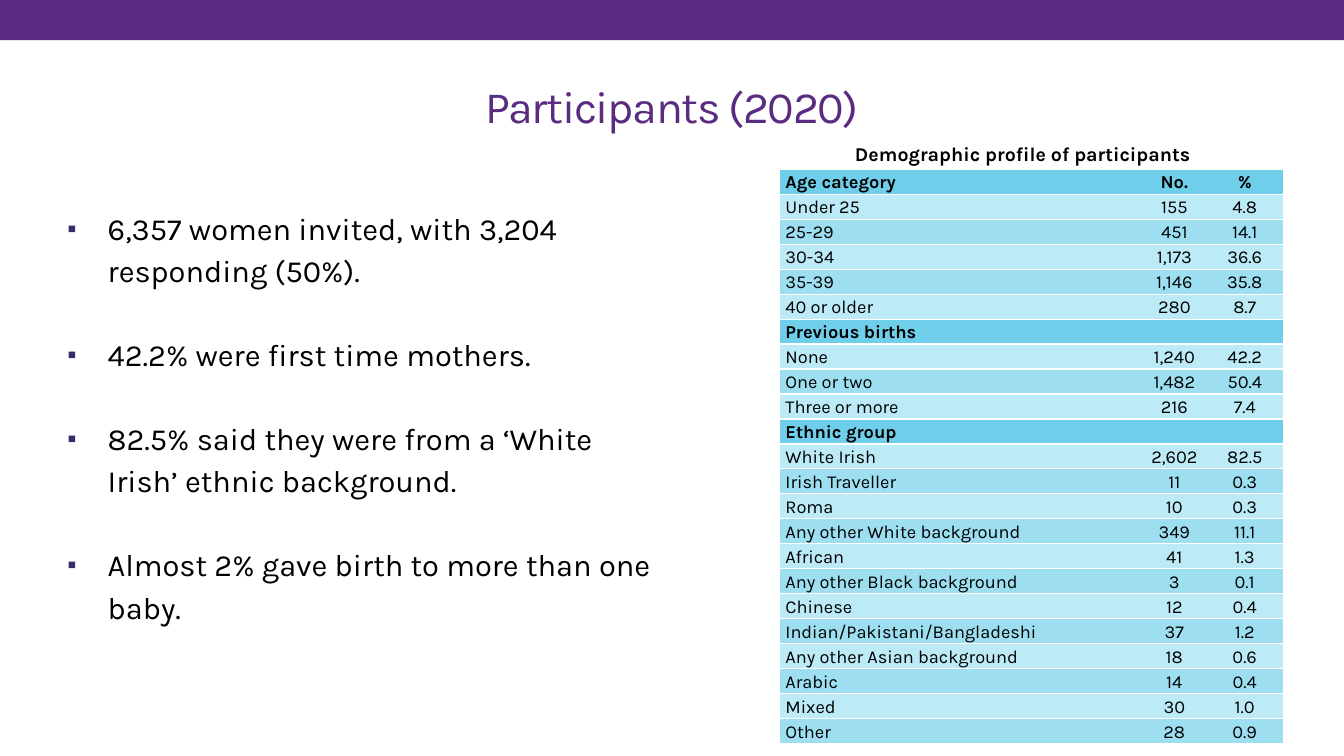
from lxml.etree import SubElement
from pptx import Presentation
from pptx.dml.color import RGBColor
from pptx.enum.shapes import MSO_SHAPE
from pptx.enum.text import MSO_ANCHOR, PP_ALIGN
from pptx.oxml.ns import qn
from pptx.util import Inches, Pt

WIDE, HIGH = 13.33, 7.5
FONT, PURPLE, BLACK, WHITE = "Karla", "592C82", "000000", "FFFFFF"
HEAD, LIGHT, DARK = "6FCFEB", "BCEAF6", "9DDFF1"
PLAIN = "{2D5ABB26-0587-4C30-8999-92F81FD0307C}"  # table style without grid
LINES = 1.14

POINTS = [
    "6,357 women invited, with 3,204 responding (50%).",
    "42.2% were first time mothers.",
    "82.5% said they were from a ‘White Irish’ ethnic background.",
    "Almost 2% gave birth to more than one baby.",
]
# A row with a single entry is a heading across the table
ROWS = [
    ("Age category", "No.", "%"),
    ("Under 25", "155", "4.8"),
    ("25-29", "451", "14.1"),
    ("30-34", "1,173", "36.6"),
    ("35-39", "1,146", "35.8"),
    ("40 or older", "280", "8.7"),
    ("Previous births",),
    ("None", "1,240", "42.2"),
    ("One or two", "1,482", "50.4"),
    ("Three or more", "216", "7.4"),
    ("Ethnic group",),
    ("White Irish", "2,602", "82.5"),
    ("Irish Traveller", "11", "0.3"),
    ("Roma", "10", "0.3"),
    ("Any other White background", "349", "11.1"),
    ("African", "41", "1.3"),
    ("Any other Black background", "3", "0.1"),
    ("Chinese", "12", "0.4"),
    ("Indian/Pakistani/Bangladeshi", "37", "1.2"),
    ("Any other Asian background", "18", "0.6"),
    ("Arabic", "14", "0.4"),
    ("Mixed", "30", "1.0"),
    ("Other", "28", "0.9"),
]


def color(code):
    return RGBColor.from_string(code)


def apply(target, values):
    for name, value in values.items():
        setattr(target, name, value)


def style(para, size, code=BLACK, bold=False, **form):
    apply(para, form)
    apply(para.font, {"name": FONT, "size": Pt(size), "bold": bold})
    para.font.color.rgb = color(code)


def add_text(slide, box, anchor=MSO_ANCHOR.TOP):
    frame = slide.shapes.add_textbox(*map(Inches, box)).text_frame
    apply(frame, {"word_wrap": True, "vertical_anchor": anchor})
    return frame


def add_band(slide, box):
    band = slide.shapes.add_shape(MSO_SHAPE.RECTANGLE, *map(Inches, box))
    band.shadow.inherit = False
    band.fill.solid()
    band.fill.fore_color.rgb = color(PURPLE)
    band.line.fill.background()


def add_title(slide, box):
    para = add_text(slide, box, MSO_ANCHOR.MIDDLE).paragraphs[0]
    run = para.add_run()
    run.text = "Participants (2020)"
    style(para, 32, PURPLE, alignment=PP_ALIGN.CENTER)
    run.font._element.set("spc", "-100")


def add_mark(para):
    props = para._p.get_or_add_pPr()
    indent = Inches(0.4)
    props.set("marL", str(indent))
    props.set("indent", str(-indent))
    tint = SubElement(props, qn("a:buClr"))
    SubElement(tint, qn("a:srgbClr"), val="392B6C")
    SubElement(props, qn("a:buSzPct"), val="85000")
    SubElement(props, qn("a:buFont"), typeface="Arial")
    SubElement(props, qn("a:buChar"), char="▪")


def add_points(slide, box):
    frame = add_text(slide, box)
    for i, point in enumerate(POINTS):
        para = frame.add_paragraph() if i else frame.paragraphs[0]
        para.text = point
        add_mark(para)
        style(para, 22, line_spacing=LINES, space_before=Pt(30 if i else 0))


def add_rules(cell):
    props = cell._tc.get_or_add_tcPr()
    for side in ("a:lnT", "a:lnB"):
        line = SubElement(props, qn(side), w=str(Pt(1)))
        fill = SubElement(line, qn("a:solidFill"))
        SubElement(fill, qn("a:srgbClr"), val=WHITE)


def fill_cell(cell, text, col, shade, bold):
    apply(cell, {
        "margin_left": Inches(0.05), "margin_right": Inches(0.05),
        "margin_top": 0, "margin_bottom": 0,
    })
    add_rules(cell)
    cell.fill.solid()
    cell.fill.fore_color.rgb = color(shade)
    para = cell.text_frame.paragraphs[0]
    para.text = text
    align = PP_ALIGN.CENTER if col else PP_ALIGN.LEFT
    style(para, 13, bold=bold, alignment=align, line_spacing=LINES)


def add_profile(slide, box):
    left, top, width, height = box
    # Caption
    caption = 0.32
    para = add_text(slide, (left, top, width - 0.18, caption)).paragraphs[0]
    para.text = "Demographic profile of participants"
    style(para, 14, bold=True, alignment=PP_ALIGN.CENTER)

    # Table grid
    area = (left, top + caption, width, height - caption)
    frame = slide.shapes.add_table(len(ROWS), 3, *map(Inches, area))
    table = frame.table
    table._tbl.tblPr.find(qn("a:tableStyleId")).text = PLAIN
    for col, share in zip(table.columns, (0.72, 0.126, 0.154)):
        col.width = Inches(width * share)
    for row in table.rows:
        row.height = Inches(area[3] / len(ROWS))

    # Headings and banded rows
    for r, row in enumerate(ROWS):
        group = len(row) == 1
        head = group or r == 0
        shade = HEAD if head else LIGHT if r % 2 else DARK
        if group:
            table.cell(r, 0).merge(table.cell(r, 2))
            row += ("", "")
        for c, text in enumerate(row):
            fill_cell(table.cell(r, c), text, c, shade, head)


def main():
    deck = Presentation()
    apply(deck, {"slide_width": Inches(WIDE), "slide_height": Inches(HIGH)})
    slide = deck.slides.add_slide(deck.slide_layouts[6])
    add_band(slide, (0, 0, WIDE, 0.4))
    add_title(slide, (0.05 * WIDE, 0.42, 0.9 * WIDE, 1.26))
    add_points(slide, (0.57, 1.98, 6.04, 5.1))
    add_profile(slide, (7.74, 1.36, 4.99, 5.84))
    deck.save("out.pptx")


if __name__ == "__main__":
    main()
